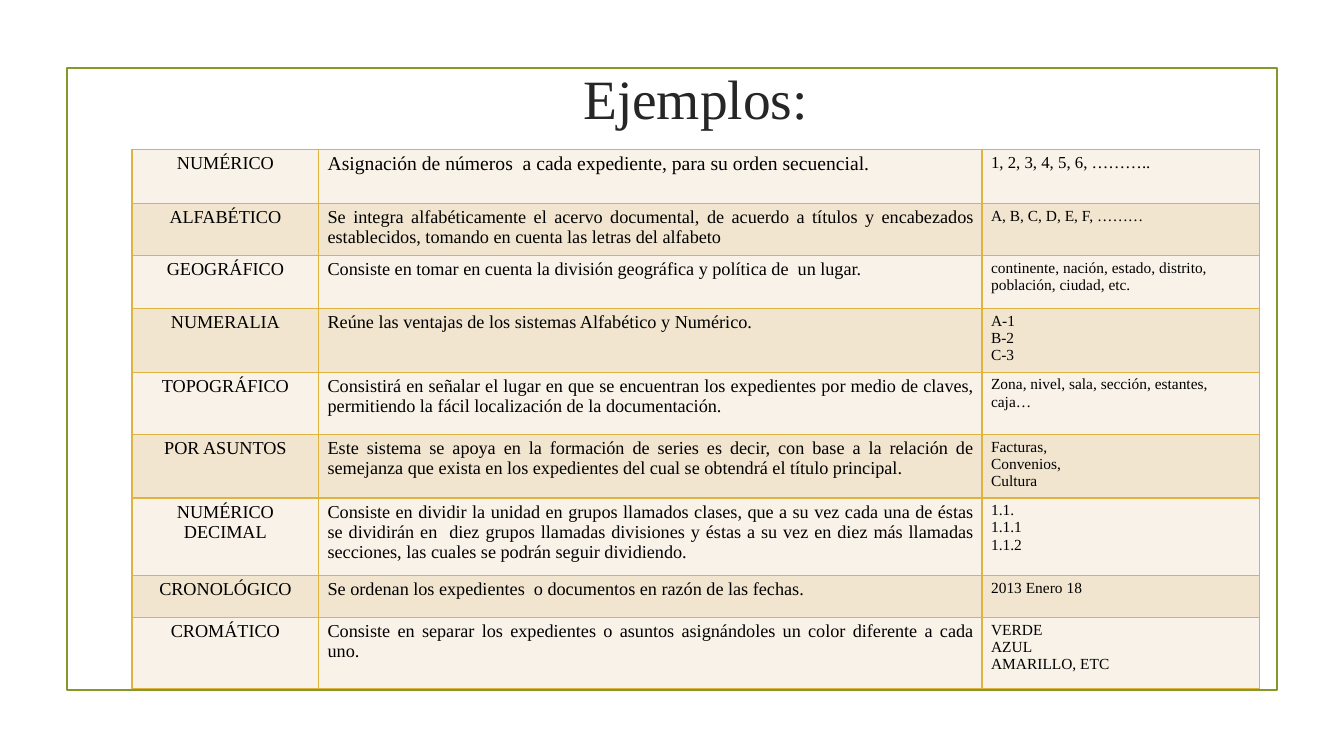
import pptx
import pptx.dml.color
import pptx.enum.shapes
import pptx.enum.text
import pptx.oxml
import pptx.oxml.ns
import pptx.util

INCH = pptx.util.Inches
ALIGN = pptx.enum.text.PP_ALIGN
ANCHOR = pptx.enum.text.MSO_ANCHOR

WIDTH, HEIGHT = 13.33, 7.5
FONT = "Times New Roman"
GREEN, GOLD = "83992A", "DEB340"
BANDS = ["F9F2E8", "F2E5CF"]
COLUMN_WIDTHS = [1.85, 6.58, 2.75]

SYSTEMS = [
    (0.54, "NUMÉRICO",
     "Asignación de números  a cada expediente, para su orden secuencial.",
     "1, 2, 3, 4, 5, 6, ……….."),
    (0.48, "ALFABÉTICO",
     "Se integra alfabéticamente el acervo documental, de acuerdo a títulos y encabezados "
     "establecidos, tomando en cuenta las letras del alfabeto",
     "A, B, C, D, E, F, ………"),
    (0.53, "GEOGRÁFICO",
     "Consiste en tomar en cuenta la división geográfica y política de  un lugar.",
     "continente, nación, estado, distrito, población, ciudad, etc."),
    (0.6, "NUMERALIA",
     "Reúne las ventajas de los sistemas Alfabético y Numérico.",
     "A-1\nB-2\nC-3"),
    (0.62, "TOPOGRÁFICO",
     "Consistirá en señalar el lugar en que se encuentran los expedientes por medio de claves, "
     "permitiendo la fácil localización de la documentación.",
     "Zona, nivel, sala, sección, estantes, caja…"),
    (0.63, "POR ASUNTOS",
     "Este sistema se apoya en la formación de series es decir, con base a la relación de "
     "semejanza que exista en los expedientes del cual se obtendrá el título principal.",
     "Facturas,\nConvenios,\nCultura"),
    (0.77, "NUMÉRICO DECIMAL",
     "Consiste en dividir la unidad en grupos llamados clases, que a su vez cada una de éstas "
     "se dividirán en  diez grupos llamadas divisiones y éstas a su vez en diez más llamadas "
     "secciones, las cuales se podrán seguir dividiendo.",
     "1.1.\n1.1.1\n1.1.2"),
    (0.42, "CRONOLÓGICO",
     "Se ordenan los expedientes  o documentos en razón de las fechas.",
     "2013 Enero 18"),
    (0.7, "CROMÁTICO",
     "Consiste en separar los expedientes o asuntos asignándoles un color diferente a cada uno.",
     "VERDE\nAZUL\nAMARILLO, ETC"),
]


def color(value):
    return pptx.dml.color.RGBColor.from_string(value)


def write(text_frame, text, size, fill="000000", align=ALIGN.LEFT):
    text_frame.word_wrap = True
    text_frame.text = text
    for paragraph in text_frame.paragraphs:
        paragraph.alignment = align
        paragraph.font.name = FONT
        paragraph.font.size = pptx.util.Pt(size)
        paragraph.font.color.rgb = color(fill)


def add_frame(slide, left, top, width, height):
    frame = slide.shapes.add_shape(
        pptx.enum.shapes.MSO_SHAPE.RECTANGLE,
        INCH(left), INCH(top), INCH(width), INCH(height))
    frame.shadow.inherit = False
    frame.fill.background()
    frame.line.color.rgb = color(GREEN)
    frame.line.width = pptx.util.Pt(1.25)


def add_title(slide, left, top, width, height):
    title = slide.shapes.add_textbox(INCH(left), INCH(top), INCH(width), INCH(height))
    text_frame = title.text_frame
    text_frame.margin_top = text_frame.margin_bottom = 0
    text_frame.vertical_anchor = ANCHOR.MIDDLE
    write(text_frame, "Ejemplos:", size=39.6, fill="262626", align=ALIGN.CENTER)


def style_cell(cell, fill):
    cell.margin_left = cell.margin_right = INCH(0.09)
    cell.margin_top = cell.margin_bottom = INCH(0.04)
    cell.vertical_anchor = ANCHOR.TOP
    properties = cell._tc.get_or_add_tcPr()
    for side in ("lnL", "lnR", "lnT", "lnB"):
        properties.append(pptx.oxml.parse_xml(
            f'<a:{side} {pptx.oxml.ns.nsdecls("a")} w="12700"><a:solidFill>'
            f'<a:srgbClr val="{GOLD}"/></a:solidFill></a:{side}>'))
    cell.fill.solid()
    cell.fill.fore_color.rgb = color(fill)


def add_systems_table(slide, left, top, width, height):
    table = slide.shapes.add_table(
        len(SYSTEMS), len(COLUMN_WIDTHS),
        INCH(left), INCH(top), INCH(width), INCH(height)).table
    table.first_row = False
    table.horz_banding = False
    for column, share in zip(table.columns, COLUMN_WIDTHS):
        column.width = INCH(width * share / sum(COLUMN_WIDTHS))
    total = sum(system[0] for system in SYSTEMS)
    for index, (share, *texts) in enumerate(SYSTEMS):
        row = table.rows[index]
        row.height = INCH(height * share / total)
        first = index == 0
        formats = [
            {"size": 13, "align": ALIGN.CENTER},
            {"size": 14 if first else 13, "align": ALIGN.LEFT if first else ALIGN.JUSTIFY},
            {"size": 12 if first else 11},
        ]
        for cell, text, text_format in zip(row.cells, texts, formats):
            style_cell(cell, BANDS[index % 2])
            write(cell.text_frame, text, **text_format)


def main():
    presentation = pptx.Presentation()
    presentation.slide_width = INCH(WIDTH)
    presentation.slide_height = INCH(HEIGHT)
    slide = presentation.slides.add_slide(presentation.slide_layouts[6])
    add_frame(slide, 0.05 * WIDTH, 0.09 * HEIGHT, 0.9 * WIDTH, 0.823 * HEIGHT)
    add_title(slide, 1.15, 0.66, 11.5, 0.61)
    add_systems_table(slide, 1.31, 1.48, sum(COLUMN_WIDTHS), 5.28)
    presentation.save("out.pptx")


if __name__ == "__main__":
    main()
